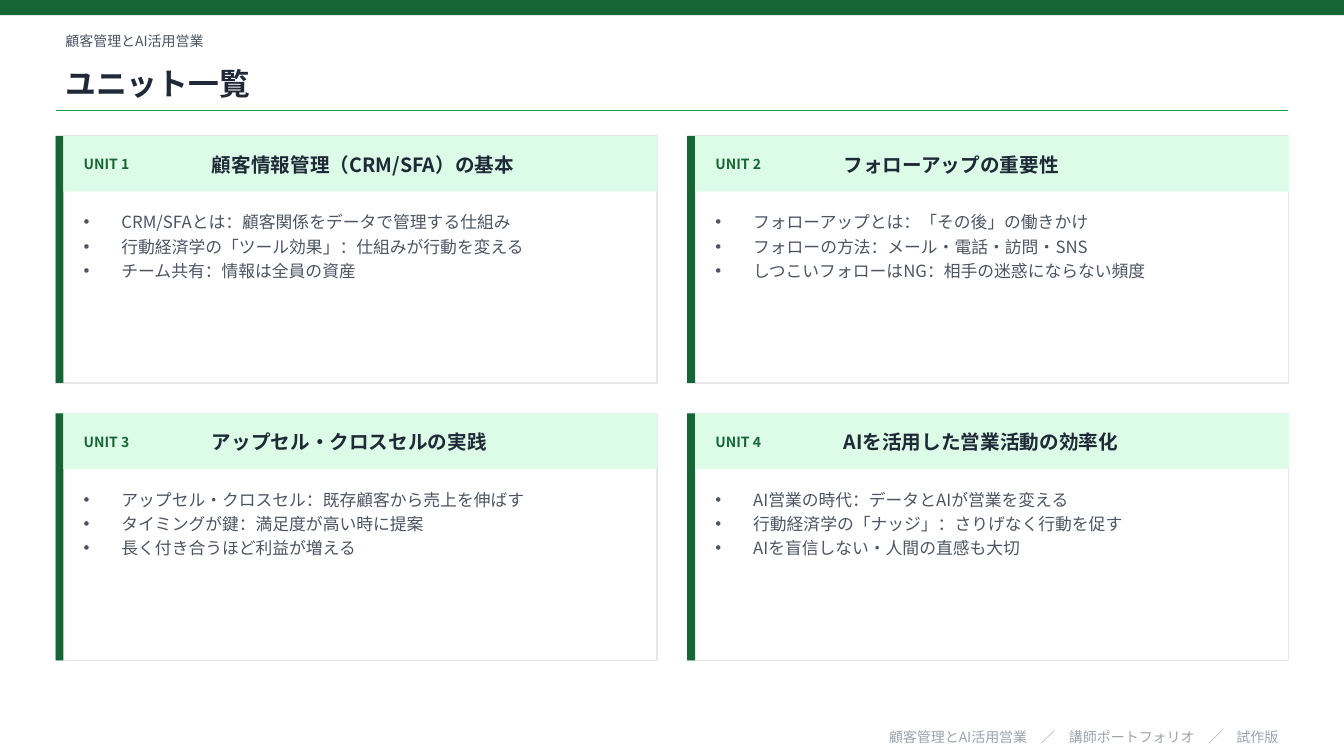
from dataclasses import dataclass

from lxml.etree import SubElement
from pptx import Presentation
from pptx.dml.color import RGBColor
from pptx.enum.shapes import MSO_CONNECTOR, MSO_SHAPE
from pptx.enum.text import MSO_ANCHOR as Anchor, MSO_AUTO_SIZE as AutoSize, PP_ALIGN as Align
from pptx.oxml.ns import qn
from pptx.shapes.base import BaseShape
from pptx.slide import Slide
from pptx.util import Cm, Pt


@dataclass(frozen=True)
class Theme:
    font: str = "Noto Sans CJK JP"
    dark_green: str = "166534"
    green: str = "16A34A"
    pale_green: str = "DCFCE7"
    white: str = "FFFFFF"
    border: str = "E5E7EB"
    ink: str = "1F2937"
    body: str = "4B5563"
    muted: str = "9CA3AF"
    title_size: int = 22
    heading_size: int = 14
    list_size: int = 12
    small_size: int = 10


@dataclass(frozen=True)
class Area:
    """A rectangle on the slide, in centimetres."""
    left: float
    top: float
    width: float
    height: float


@dataclass(frozen=True)
class TextStyle:
    size: int
    color: str
    bold: bool = False
    align: Align = Align.LEFT
    anchor: Anchor = Anchor.MIDDLE
    bulleted: bool = False


@dataclass(frozen=True)
class Unit:
    heading: str
    points: tuple[str, ...]


THEME = Theme()
SMALL = TextStyle(THEME.small_size, THEME.body)
TITLE = TextStyle(THEME.title_size, THEME.ink, bold=True)
LABEL = TextStyle(THEME.small_size, THEME.dark_green, bold=True)
HEADING = TextStyle(THEME.heading_size, THEME.ink, bold=True)
POINTS = TextStyle(THEME.list_size, THEME.body, anchor=Anchor.TOP, bulleted=True)
FOOTER = TextStyle(THEME.small_size, THEME.muted, align=Align.RIGHT)

SLIDE_WIDTH, SLIDE_HEIGHT = 33.87, 19.05
MARGIN, CONTENT_WIDTH = 1.4, 31.06
RULE_TOP = 2.79
CARD_TOP, CARD_WIDTH, CARD_HEIGHT = 3.43, 15.16, 6.22
COLUMNS, COLUMN_STEP, ROW_STEP = 2, 15.92, 6.99
STRIPE_WIDTH, BAND_HEIGHT = 0.2, 1.4

UNITS = (
    Unit("顧客情報管理（CRM/SFA）の基本", (
        "CRM/SFAとは：顧客関係をデータで管理する仕組み",
        "行動経済学の「ツール効果」：仕組みが行動を変える",
        "チーム共有：情報は全員の資産")),
    Unit("フォローアップの重要性", (
        "フォローアップとは：「その後」の働きかけ",
        "フォローの方法：メール・電話・訪問・SNS",
        "しつこいフォローはNG：相手の迷惑にならない頻度")),
    Unit("アップセル・クロスセルの実践", (
        "アップセル・クロスセル：既存顧客から売上を伸ばす",
        "タイミングが鍵：満足度が高い時に提案",
        "長く付き合うほど利益が増える")),
    Unit("AIを活用した営業活動の効率化", (
        "AI営業の時代：データとAIが営業を変える",
        "行動経済学の「ナッジ」：さりげなく行動を促す",
        "AIを盲信しない・人間の直感も大切")),
)


def place(shape: BaseShape, area: Area) -> None:
    shape.left, shape.top = Cm(area.left), Cm(area.top)
    shape.width, shape.height = Cm(area.width), Cm(area.height)


def write(box: BaseShape, area: Area, lines: tuple[str, ...], style: TextStyle) -> None:
    """Fill a text box or placeholder with one paragraph per line."""
    place(box, area)
    frame = box.text_frame
    frame.word_wrap = True
    frame.auto_size = AutoSize.NONE
    frame.vertical_anchor = style.anchor
    frame.margin_left = frame.margin_right = Cm(0.25)
    frame.margin_top = frame.margin_bottom = Cm(0.13)
    frame.text = "\n".join(lines)
    for para in frame.paragraphs:
        para.alignment = style.align
        para.line_spacing = 1.0
        para.space_before = Pt(0)
        para.space_after = Pt(3 if style.bulleted else 0)
        properties = para._p.get_or_add_pPr()
        if style.bulleted:
            properties.set("marL", str(Cm(0.95)))
            properties.set("indent", str(-Cm(0.95)))
            SubElement(properties, qn("a:buFont"), typeface="Arial")
            SubElement(properties, qn("a:buChar"), char="•")
        font = para.font
        font.name = THEME.font
        font.size = Pt(style.size)
        font.bold = style.bold
        font.color.rgb = RGBColor.from_string(style.color)
        SubElement(properties.find(qn("a:defRPr")), qn("a:ea"), typeface=THEME.font)


def add_text(page: Slide, area: Area, text: str, style: TextStyle) -> None:
    write(page.shapes.add_textbox(0, 0, 0, 0), area, (text,), style)


def add_block(page: Slide, area: Area, fill: str, line: str | None = None) -> None:
    block = page.shapes.add_shape(MSO_SHAPE.RECTANGLE, 0, 0, 0, 0)
    place(block, area)
    block.shadow.inherit = False
    block.fill.solid()
    block.fill.fore_color.rgb = RGBColor.from_string(fill)
    if line:
        block.line.color.rgb = RGBColor.from_string(line)
        block.line.width = Pt(1)
    else:
        block.line.fill.background()


def add_rule(page: Slide) -> None:
    rule = page.shapes.add_connector(
        MSO_CONNECTOR.STRAIGHT, Cm(MARGIN), Cm(RULE_TOP),
        Cm(MARGIN + CONTENT_WIDTH), Cm(RULE_TOP))
    rule.line.color.rgb = RGBColor.from_string(THEME.green)
    rule.line.width = Pt(1)
    SubElement(rule._element.spPr, qn("a:effectLst"))


def add_card(page: Slide, body: BaseShape, index: int, unit: Unit) -> None:
    row, column = divmod(index, COLUMNS)
    left = MARGIN + column * COLUMN_STEP
    top = CARD_TOP + row * ROW_STEP
    add_block(page, Area(left, top, CARD_WIDTH, CARD_HEIGHT), THEME.white, THEME.border)
    add_block(page, Area(left, top, STRIPE_WIDTH, CARD_HEIGHT), THEME.dark_green)
    add_block(page, Area(left + STRIPE_WIDTH, top, CARD_WIDTH - STRIPE_WIDTH, BAND_HEIGHT),
              THEME.pale_green)
    add_text(page, Area(left + 0.46, top + 0.2, 3.05, 1.02), f"UNIT {index + 1}", LABEL)
    add_text(page, Area(left + 3.69, top + 0.2, 11.1, 1.02), unit.heading, HEADING)
    write(body, Area(left + 0.46, top + 1.78, 14.25, 4.06), unit.points, POINTS)
    # Bring the list in front of its card
    body.element.getparent().append(body.element)


def main() -> None:
    deck = Presentation()
    deck.slide_width, deck.slide_height = Cm(SLIDE_WIDTH), Cm(SLIDE_HEIGHT)
    # The comparison layout has a title and four bodies
    page = deck.slides.add_slide(deck.slide_layouts.get_by_name("Comparison"))
    title, *bodies = page.placeholders

    # Header
    add_block(page, Area(0, 0, SLIDE_WIDTH, 0.38), THEME.dark_green)
    add_text(page, Area(MARGIN, 0.64, CONTENT_WIDTH, 0.76), "顧客管理とAI活用営業", SMALL)
    write(title, Area(MARGIN, 1.4, CONTENT_WIDTH, 1.4), ("ユニット一覧",), TITLE)
    add_rule(page)

    # Unit cards
    for index, (body, unit) in enumerate(zip(bodies, UNITS)):
        add_card(page, body, index, unit)

    # Footer
    add_text(page, Area(MARGIN, 18.29, CONTENT_WIDTH, 0.56),
             "顧客管理とAI活用営業　／　講師ポートフォリオ　／　試作版", FOOTER)
    deck.save("out.pptx")


if __name__ == "__main__":
    main()
